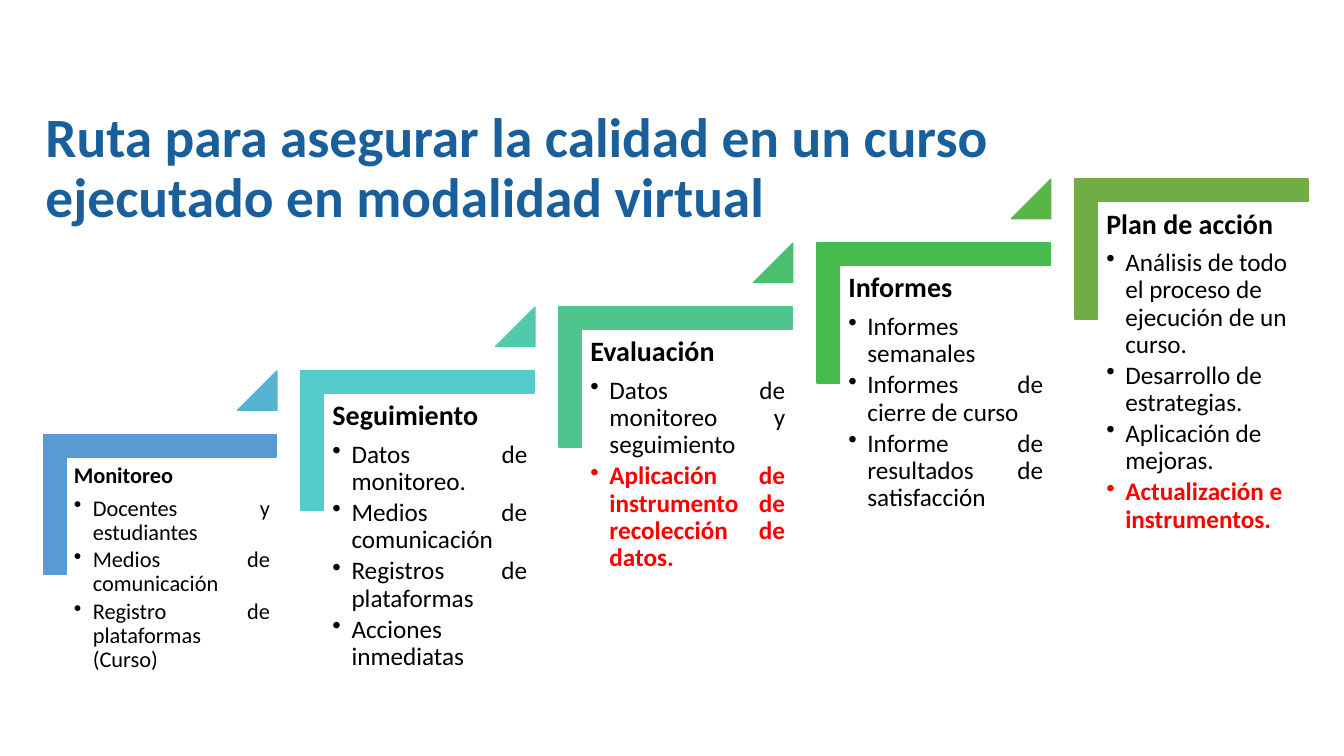
"""Build a slide with the five-step quality route of a virtual course."""
from lxml.etree import SubElement
from pptx import Presentation
from pptx.dml.color import RGBColor
from pptx.enum.shapes import MSO_SHAPE
from pptx.enum.text import MSO_ANCHOR, MSO_AUTO_SIZE, PP_ALIGN
from pptx.oxml.ns import qn
from pptx.util import Cm, Pt

TITLE_BLUE = RGBColor(0x18, 0x5F, 0x9B)
BLACK = RGBColor(0x00, 0x00, 0x00)
RED = RGBColor(0xFF, 0x00, 0x00)
CORNER_COLORS = [
    RGBColor(0x5B, 0x9B, 0xD5), RGBColor(0x54, 0xCC, 0xCD), RGBColor(0x4D, 0xC5, 0x8D),
    RGBColor(0x48, 0xBB, 0x4F), RGBColor(0x70, 0xAD, 0x47),
]
TRIANGLE_COLORS = [
    RGBColor(0x57, 0xB4, 0xD1), RGBColor(0x51, 0xC9, 0xAD),
    RGBColor(0x4A, 0xC0, 0x6E), RGBColor(0x59, 0xB5, 0x46),
]
STEP_RIGHT, STEP_UP = 6.5, 1.61

STEPS = [
    ("Monitoreo", ["Docentes y estudiantes", "Medios de comunicación",
                   "Registro de plataformas (Curso)"]),
    ("Seguimiento", ["Datos de monitoreo.", "Medios de comunicación",
                     "Registros de plataformas", "Acciones inmediatas"]),
    ("Evaluación", ["Datos de monitoreo y seguimiento",
                    "Aplicación de instrumento de recolección de datos."]),
    ("Informes", ["Informes semanales", "Informes de cierre de curso",
                  "Informe de resultados de satisfacción"]),
    ("Plan de acción", ["Análisis de todo el proceso de ejecución de un curso.",
                        "Desarrollo de estrategias.", "Aplicación de mejoras.",
                        "Actualización e instrumentos."]),
]
HIGHLIGHTED = {"Aplicación de instrumento de recolección de datos.",
               "Actualización e instrumentos."}


def apply(target, values):
    for name, value in values.items():
        setattr(target, name, value)


def place(shape, left, top, width, height):
    apply(shape, {"left": Cm(left), "top": Cm(top),
                  "width": Cm(width), "height": Cm(height)})


def write(paragraph, text, size, color, bold):
    span = paragraph.add_run()
    span.text = text
    apply(span.font, {"name": "Calibri", "size": Pt(size), "bold": bold})
    span.font.color.rgb = color


def add_title(page, text):
    title = page.shapes.title
    place(title, 0.89, 2.57, 25.88, 3.33)
    apply(title.text_frame, {"vertical_anchor": MSO_ANCHOR.BOTTOM, "word_wrap": True,
                             "auto_size": MSO_AUTO_SIZE.NONE})
    paragraph = title.text_frame.paragraphs[0]
    apply(paragraph, {"alignment": PP_ALIGN.LEFT, "line_spacing": 0.9})
    write(paragraph, text, 39.6, TITLE_BLUE, True)


def add_figure(page, kind, bounds, adjustments, color):
    figure = page.shapes.add_shape(kind, *map(Cm, bounds))
    figure.shadow.inherit = False
    for index, value in enumerate(adjustments):
        figure.adjustments[index] = value
    figure.fill.solid()
    figure.fill.fore_color.rgb = color
    figure.line.color.rgb = color
    figure.line.width = Pt(1)
    return figure


def add_bullet(paragraph):
    properties = paragraph._p.get_or_add_pPr()
    properties.set("marL", str(Cm(0.48)))
    properties.set("indent", str(Cm(-0.48)))
    SubElement(properties, qn("a:buChar")).set("char", "•")


def add_step_text(page, left, top, heading, items, sizes, inset, alignment):
    box = page.shapes.add_textbox(Cm(left), Cm(top), Cm(5.31), Cm(4.65))
    frame = box.text_frame
    apply(frame, {"word_wrap": True, "vertical_anchor": MSO_ANCHOR.TOP})
    apply(frame, dict.fromkeys(
        ["margin_left", "margin_top", "margin_right", "margin_bottom"], Cm(inset)))
    heading_size, item_size = sizes
    para = frame.paragraphs[0]
    apply(para, {"line_spacing": 0.9, "space_after": Pt(0.35 * heading_size)})
    write(para, heading, heading_size, BLACK, True)
    for item in items:
        para = frame.add_paragraph()
        apply(para, {"level": 1, "alignment": alignment, "line_spacing": 0.9,
                     "space_before": Pt(0), "space_after": Pt(0.15 * item_size)})
        add_bullet(para)
        marked = item in HIGHLIGHTED
        write(para, item, item_size, RED if marked else BLACK, marked)


def add_step(page, index, heading, items):
    right, up = index * STEP_RIGHT, index * STEP_UP
    first, last = index == 0, index == len(STEPS) - 1
    corner = add_figure(page, MSO_SHAPE.CORNER, (2.26 + right, 9.78 - up, 3.53, 5.87),
                        (0.161, 0.161), CORNER_COLORS[index])
    corner.rotation = 90
    add_step_text(page, 1.68 + right, 11.53 - up, heading, items,
                  (16, 16) if first else (20, 18), 0.18 if first else 0.2,
                  PP_ALIGN.LEFT if last else PP_ALIGN.JUSTIFY)
    if not last:
        add_figure(page, MSO_SHAPE.ISOSCELES_TRIANGLE,
                   (5.99 + right, 9.35 - up, 0.99, 0.99), (1,), TRIANGLE_COLORS[index])


def main():
    deck = Presentation()
    apply(deck, {"slide_width": Cm(33.87), "slide_height": Cm(19.05)})
    page = deck.slides.add_slide(deck.slide_layouts[5])
    add_title(page, "Ruta para asegurar la calidad en un curso ejecutado en modalidad virtual")
    for index, (heading, items) in enumerate(STEPS):
        add_step(page, index, heading, items)
    deck.save("out.pptx")


if __name__ == "__main__":
    main()
